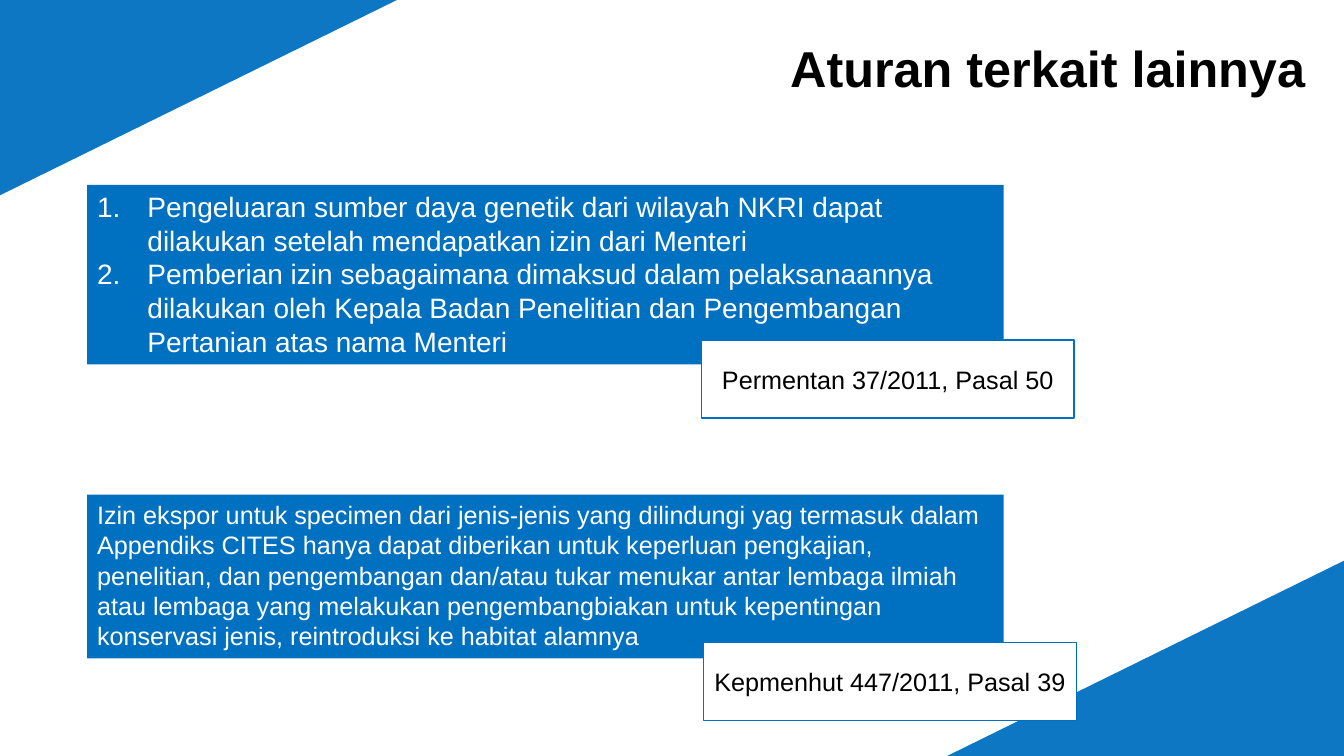
from dataclasses import dataclass

from lxml import etree
from pptx import Presentation
from pptx.dml.color import RGBColor
from pptx.enum import text
from pptx.enum.shapes import MSO_SHAPE
from pptx.oxml.ns import qn
from pptx.util import Pt

PX = 9525
WIDTH, HEIGHT = 1280, 720
CORNER_WIDTH, CORNER_HEIGHT = 378, 186
INDENT = 48 * PX

BLUE = RGBColor(0x00, 0x70, 0xC0)
WHITE = RGBColor(0xFF, 0xFF, 0xFF)
BLACK = RGBColor(0x00, 0x00, 0x00)


@dataclass(frozen=True)
class Box:
    left: int
    top: int
    width: int
    height: int

    def emu(self) -> list[int]:
        return [side * PX for side in (self.left, self.top, self.width, self.height)]


@dataclass(frozen=True)
class Regulation:
    box: Box
    clauses: tuple[str, ...]
    size: int
    source: str
    source_box: Box


REGULATIONS = (
    Regulation(
        Box(83, 176, 873, 171),
        (
            "Pengeluaran sumber daya genetik dari wilayah NKRI dapat dilakukan "
            "setelah mendapatkan izin dari Menteri",
            "Pemberian izin sebagaimana dimaksud dalam pelaksanaannya dilakukan "
            "oleh Kepala Badan Penelitian dan Pengembangan Pertanian atas nama Menteri",
        ),
        20,
        "Permentan 37/2011, Pasal 50",
        Box(668, 324, 355, 74),
    ),
    Regulation(
        Box(83, 471, 873, 156),
        (
            "Izin ekspor untuk specimen dari jenis-jenis yang dilindungi yag termasuk "
            "dalam Appendiks CITES hanya dapat diberikan untuk keperluan pengkajian, "
            "penelitian, dan pengembangan dan/atau tukar menukar antar lembaga ilmiah "
            "atau lembaga yang melakukan pengembangbiakan untuk kepentingan "
            "konservasi jenis, reintroduksi ke habitat alamnya",
        ),
        18,
        "Kepmenhut 447/2011, Pasal 39",
        Box(670, 612, 355, 74),
    ),
)


def write(shape, *paragraphs: str, size: int, color: RGBColor, bold: bool = False,
          align=text.PP_ALIGN.LEFT, anchor=text.MSO_ANCHOR.MIDDLE,
          fit=text.MSO_AUTO_SIZE.NONE, numbered: bool = False) -> None:
    frame = shape.text_frame
    frame.word_wrap = True
    frame.auto_size = fit
    frame.vertical_anchor = anchor
    frame.text = "\n".join(paragraphs)
    for paragraph in frame.paragraphs:
        paragraph.alignment = align
        if numbered:
            properties = paragraph._p.get_or_add_pPr()
            properties.set("marL", str(INDENT))
            properties.set("indent", str(-INDENT))
            etree.SubElement(properties, qn("a:buAutoNum"), type="arabicPeriod")
        for run in paragraph.runs:
            run.font.name = "Arial"
            run.font.size = Pt(size)
            run.font.bold = bold
            run.font.color.rgb = color


def add_panel(slide, box: Box, fill: RGBColor, outlined: bool = False):
    panel = slide.shapes.add_shape(MSO_SHAPE.RECTANGLE, *box.emu())
    panel.shadow.inherit = False
    panel.fill.solid()
    panel.fill.fore_color.rgb = fill
    if outlined:
        panel.line.color.rgb = BLUE
        panel.line.width = Pt(1)
    else:
        panel.line.fill.background()
    return panel


def add_corner(slide, x: int, y: int, direction: int) -> None:
    """Draw a triangle from slide corner (x, y); direction 1 is right and down."""
    builder = slide.shapes.build_freeform(x + direction * CORNER_WIDTH, y, scale=PX)
    builder.add_line_segments([(x, y), (x, y + direction * CORNER_HEIGHT)], close=True)
    corner = builder.convert_to_shape()
    corner.shadow.inherit = False
    corner.fill.solid()
    corner.fill.fore_color.rgb = BLUE
    color = corner._element.spPr.find(qn("a:solidFill"))[0]
    etree.SubElement(color, qn("a:alpha"), val="95000")
    corner.line.fill.background()


def add_regulation(slide, regulation: Regulation) -> None:
    rule = add_panel(slide, regulation.box, BLUE)
    write(rule, *regulation.clauses, size=regulation.size, color=WHITE,
          anchor=text.MSO_ANCHOR.TOP, fit=text.MSO_AUTO_SIZE.SHAPE_TO_FIT_TEXT,
          numbered=len(regulation.clauses) > 1)
    source = add_panel(slide, regulation.source_box, WHITE, outlined=True)
    write(source, regulation.source, size=18, color=BLACK, align=text.PP_ALIGN.CENTER)


def main() -> None:
    deck = Presentation()
    deck.slide_width, deck.slide_height = WIDTH * PX, HEIGHT * PX
    slide = deck.slides.add_slide(deck.slide_layouts.get_by_name("Title Only"))

    add_corner(slide, 0, 0, 1)
    add_corner(slide, WIDTH, HEIGHT, -1)
    for regulation in REGULATIONS:
        add_regulation(slide, regulation)

    title = slide.shapes.title
    title.left, title.top, title.width, title.height = Box(38, 26, 1215, 76).emu()
    write(title, "Aturan terkait lainnya", size=36, color=BLACK, bold=True,
          align=text.PP_ALIGN.RIGHT)
    deck.save("out.pptx")


if __name__ == "__main__":
    main()
